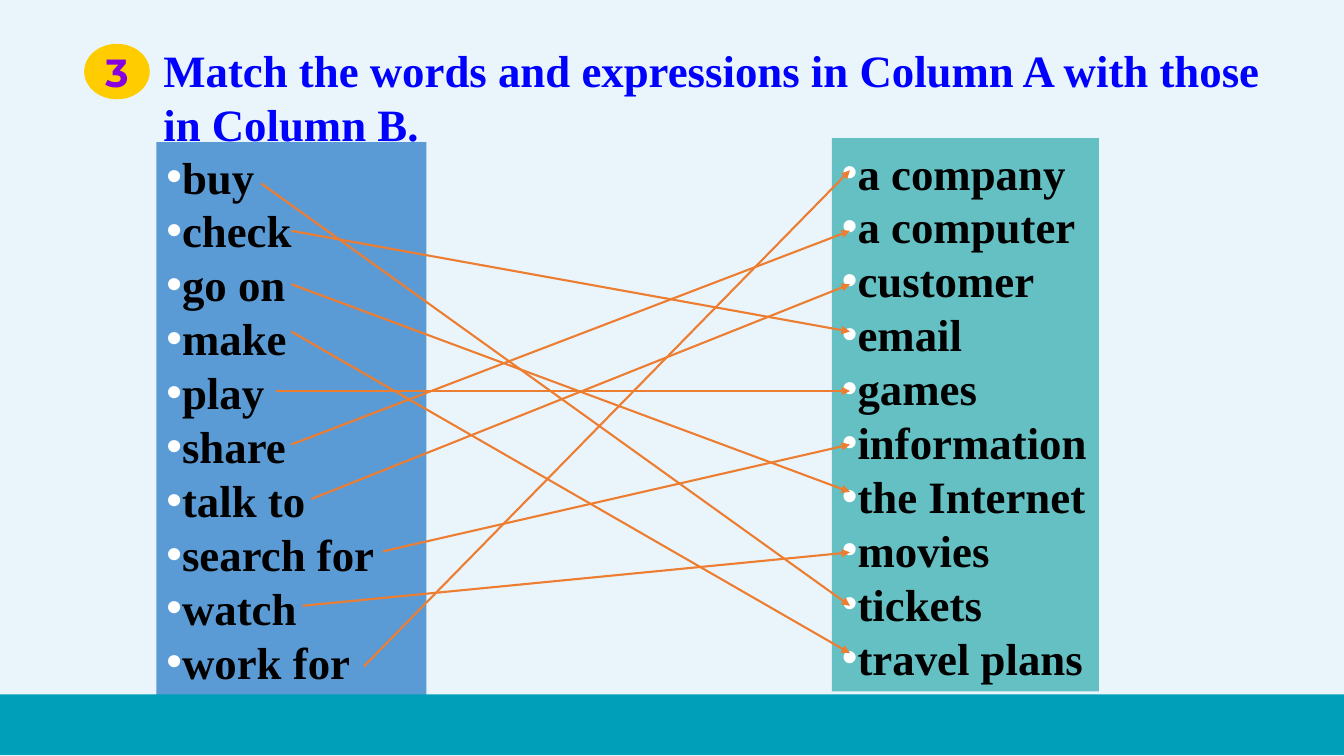
"""Build a matching exercise that links two columns of words with arrows."""
import pptx
import pptx.util
import pptx.dml.color
import pptx.enum.shapes
import pptx.enum.text
import pptx.oxml
import pptx.oxml.ns
from lxml import etree

Inches = pptx.util.Inches
Pt = pptx.util.Pt
qn = pptx.oxml.ns.qn
SHAPE = pptx.enum.shapes.MSO_SHAPE
ANCHOR = pptx.enum.text.MSO_ANCHOR
ALIGN = pptx.enum.text.PP_ALIGN

VERBS = [
    ("buy", 2.59, 1.82, "tickets"),
    ("check", 2.89, 2.29, "email"),
    ("go on", 2.89, 2.82, "the Internet"),
    ("make", 2.89, 3.29, "travel plans"),
    ("play", 2.74, 3.88, "games"),
    ("share", 2.89, 4.41, "a computer"),
    ("talk to", 3.09, 4.95, "customer"),
    ("search for", 3.8, 5.47, "information"),
    ("watch", 3, 6.01, "movies"),
    ("work for", 3.61, 6.61, "a company"),
]
OBJECTS = {
    "a company": 1.69, "a computer": 2.29, "customer": 2.82, "email": 3.29,
    "games": 3.88, "information": 4.41, "the Internet": 4.88,
    "movies": 5.48, "tickets": 6.01, "travel plans": 6.48,
}
ARROW_END_X = 8.43


def paint(color, value):
    color.rgb = pptx.dml.color.RGBColor.from_string(value)


class Deck:
    font, size, accent = "Times New Roman", 32, "ED7D31"

    def __init__(self, prs):
        self.slide = prs.slides.add_slide(prs.slide_layouts[3])

    def fill(self, target, color, alpha=None):
        target.fill.solid()
        paint(target.fill.fore_color, color)
        if alpha:
            clr = target._element.spPr.find(".//" + qn("a:srgbClr"))
            etree.SubElement(clr, qn("a:alpha")).set("val", str(alpha * 1000))

    def place(self, sp, box):
        sp.left, sp.top, sp.width, sp.height = map(Inches, box)

    def style(self, p, color, size=None, font=None):
        for r in p.runs:
            r.font.name = font or self.font
            r.font.size = Pt(size or self.size)
            r.font.bold = True
            paint(r.font.color, color)

    def text(self, idx, box, lines, color):
        sp = self.slide.placeholders[idx]
        self.place(sp, box)
        tf = sp.text_frame
        tf.text = "\n".join(lines)
        tf.word_wrap = True
        tf.auto_size = pptx.enum.text.MSO_AUTO_SIZE.NONE
        tf.vertical_anchor = ANCHOR.TOP
        tf.margin_top, tf.margin_bottom = Inches(0.07), Inches(0.03)
        tf.margin_right = 0
        for p in tf.paragraphs:
            p.alignment = ALIGN.LEFT
            p.space_before = Pt(0)
            p.line_spacing = Pt(38.5)
            self.style(p, color)
        return sp

    def column(self, idx, box, words, fill, alpha=None):
        sp = self.text(idx, box, words, "000000")
        self.fill(sp, fill, alpha)
        for p in sp.text_frame.paragraphs:
            pPr = p._p.get_or_add_pPr()
            pPr.set("marL", "0")
            pPr.set("indent", "0")
            clr = etree.SubElement(pPr, qn("a:buClr"))
            etree.SubElement(clr, qn("a:srgbClr")).set("val", "FFFFFF")
            etree.SubElement(pPr, qn("a:buFont")).set("typeface", "Arial")
            etree.SubElement(pPr, qn("a:buChar")).set("char", "•")

    def shape(self, kind, box, color):
        sp = self.slide.shapes.add_shape(kind, *map(Inches, box))
        sp.shadow.inherit = False
        self.fill(sp, color)
        sp.line.fill.background()
        return sp

    def badge(self, box, label):
        sp = self.shape(SHAPE.OVAL, box, "FFCC00")
        sp.line.width = Pt(0.75)
        sp.line.fill.solid()
        paint(sp.line.color, "FFCC00")
        tf = sp.text_frame
        tf.text = label
        tf.word_wrap = False
        tf.vertical_anchor = ANCHOR.MIDDLE
        p = tf.paragraphs[0]
        p.alignment = ALIGN.CENTER
        self.style(p, "8700E2", 28, "Montserrat")

    def arrow(self, *points):
        line = self.slide.shapes.add_connector(
            pptx.enum.shapes.MSO_CONNECTOR.STRAIGHT, *map(Inches, points))
        paint(line.line.color, self.accent)
        line.line.width = Pt(1.5)
        ln = line.line._get_or_add_ln()
        etree.SubElement(ln, qn("a:tailEnd")).set("type", "triangle")
        etree.SubElement(line._element.spPr, qn("a:effectLst"))


def main():
    prs = pptx.Presentation()
    prs.slide_width, prs.slide_height = Inches(13.33), Inches(7.5)
    deck = Deck(prs)
    deck.fill(deck.slide.background, "EAF5FB")
    deck.text(0, (1.52, 0.35, 11.27, 1.18),
              ["Match the words and expressions in Column A with those in Column B."],
              "0000FF")
    deck.column(1, (1.55, 1.41, 2.68, 5.49), [verb[0] for verb in VERBS], "5B9BD5")
    deck.column(2, (8.25, 1.37, 2.65, 5.49), OBJECTS, "009999", 57)
    deck.shape(SHAPE.RECTANGLE, (0, 6.89, 13.33, 0.6), "009FB9")
    for _, x, y, match in VERBS:
        deck.arrow(x, y, ARROW_END_X, OBJECTS[match])
    deck.badge((0.84, 0.44, 0.64, 0.54), "3")
    prs.save("out.pptx")


if __name__ == "__main__":
    main()
